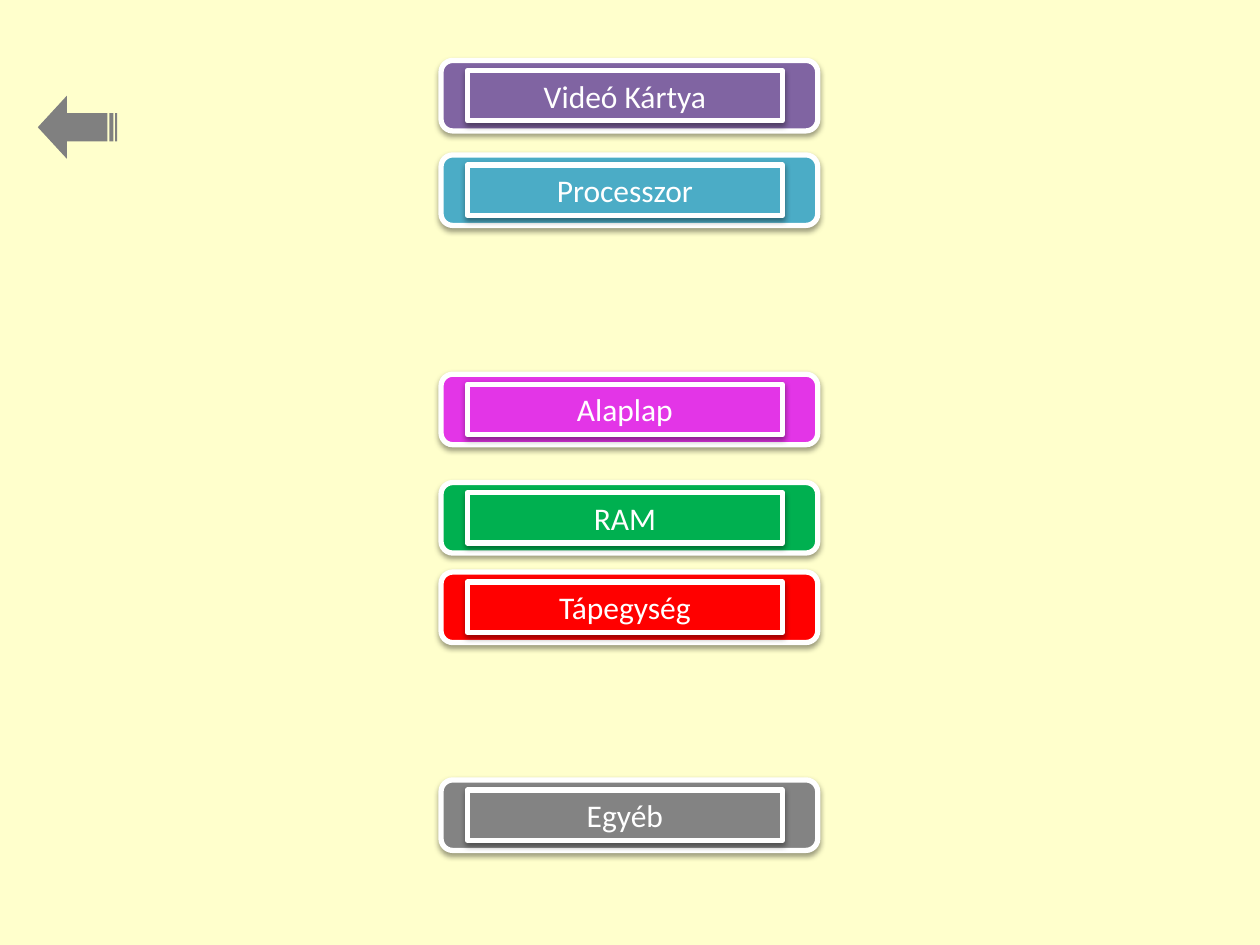
from lxml.etree import SubElement
from pptx import Presentation
from pptx.dml.color import RGBColor
from pptx.enum.shapes import MSO_SHAPE as Shape
from pptx.enum.text import MSO_ANCHOR as Anchor, MSO_AUTO_SIZE as AutoSize, PP_ALIGN as Align
from pptx.oxml.ns import qn
from pptx.util import Inches, Pt

BACKGROUND, WHITE, ARROW_GREY = "FFFFCC", "FFFFFF", "808080"
BUTTONS = [
    ("Videó Kártya", "8064A2", 0.48),
    ("Processzor", "4BACC6", 1.23),
    ("Alaplap", "E335E7", 2.97),
    ("Egyéb", "838383", 6.19),
    ("RAM", "00B050", 3.83),
    ("Tápegység", "FF0000", 4.54),
]
FRAME_LEFT, FRAME_WIDTH, FRAME_HEIGHT = 3.5, 2.99, 0.56
LABEL_LEFT, LABEL_WIDTH, LABEL_HEIGHT = 3.71, 2.5, 0.4
LABEL_INSET = (FRAME_HEIGHT - LABEL_HEIGHT) / 2


def paint(fill, color):
    fill.solid()
    fill.fore_color.rgb = RGBColor.from_string(color)


def add_filled(slide, kind, box, color):
    shape = slide.shapes.add_shape(kind, *map(Inches, box))
    paint(shape.fill, color)
    shape.line.fill.background()
    shape.shadow.inherit = False
    return shape


def add_raised(slide, kind, box, color):
    shape = add_filled(slide, kind, box, color)
    paint(shape.line.fill, WHITE)
    shape.line.width = Pt(3)
    effects = shape.element.spPr.find(qn("a:effectLst"))
    shadow = SubElement(effects, qn("a:outerShdw"), blurRad="40000", dist="20000",
                        dir="5400000", rotWithShape="0")
    shadow_color = SubElement(shadow, qn("a:srgbClr"), val="000000")
    SubElement(shadow_color, qn("a:alpha"), val="38000")
    return shape


def add_button(slide, text, color, top):
    add_raised(slide, Shape.ROUNDED_RECTANGLE,
               (FRAME_LEFT, top, FRAME_WIDTH, FRAME_HEIGHT), color)
    label = add_raised(slide, Shape.RECTANGLE,
                       (LABEL_LEFT, top + LABEL_INSET, LABEL_WIDTH, LABEL_HEIGHT), color)
    frame = label.text_frame
    frame.word_wrap = True
    frame.auto_size = AutoSize.SHAPE_TO_FIT_TEXT
    frame.vertical_anchor = Anchor.TOP
    paragraph = frame.paragraphs[0]
    paragraph.alignment = Align.CENTER
    run = paragraph.add_run()
    run.text = text
    run.font.name = "Calibri"
    run.font.size = Pt(18)
    paint(run.font.fill, WHITE)


def main():
    """Build a menu slide of computer parts with a back arrow."""
    presentation = Presentation()
    presentation.slide_width, presentation.slide_height = Inches(10), Inches(7.5)
    slide = presentation.slides.add_slide(presentation.slide_layouts[6])
    paint(slide.background.fill, BACKGROUND)
    for button in BUTTONS:
        add_button(slide, *button)
    arrow = add_filled(slide, Shape.STRIPED_RIGHT_ARROW, (0.3, 0.76, 0.63, 0.5), ARROW_GREY)
    arrow.rotation = 180
    arrow.adjustments[0], arrow.adjustments[1] = 0.45, 0.46
    presentation.save("out.pptx")


if __name__ == "__main__":
    main()
